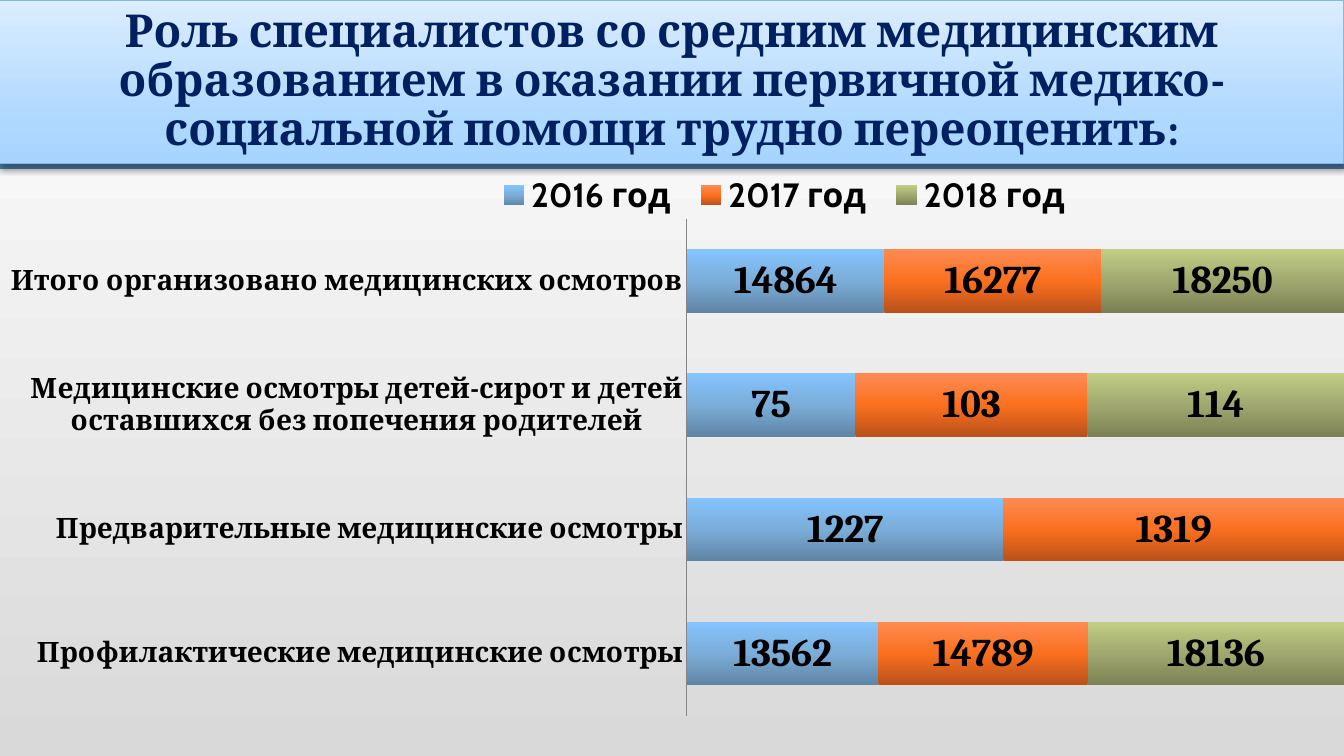
from dataclasses import dataclass

from lxml import etree
from pptx import Presentation
from pptx import util as u
from pptx.chart.data import CategoryChartData
from pptx.dml.color import RGBColor
from pptx.enum import chart as charts, shapes, text
from pptx.oxml.ns import qn

WIDTH, HEIGHT = u.Inches(13.33), u.Inches(7.5)


@dataclass(frozen=True)
class Theme:
    """Colours and type sizes; gradients list (percent, colour) from bottom to top."""
    heading_font: str = "Cambria"
    legend_font: str = "Cabin"
    title_size: float = 32.4
    category_size: int = 20
    legend_size: int = 24
    value_size: int = 28
    title_color: str = "002060"
    text_color: str = "000000"
    border: str = "84B8E2"
    axis: str = "868686"
    background: tuple = ((0, "D9D9D9"), (100, "FFFFFF"))
    band: tuple = ((0, "558BB8"), (100, "94B6D2"))
    title_fill: tuple = ((0, "A7D4FF"), (25, "AED8FF"), (100, "DBEDFF"))
    years: tuple = (
        ((0, "5F84A4"), (50, "7BADD8"), (100, "84C4FF")),
        ((0, "B9501A"), (50, "FA701F"), (100, "FF8B52")),
        ((0, "7A8052"), (50, "A0A870"), (100, "C2CE84")),
    )


THEME = Theme()

TITLE = ("Роль специалистов со средним медицинским образованием в оказании "
         "первичной медико-социальной помощи трудно переоценить:")
CATEGORIES = (
    "Профилактические медицинские осмотры",
    "Предварительные медицинские осмотры",
    "Медицинские осмотры детей-сирот и детей оставшихся без попечения родителей",
    "Итого организовано медицинских осмотров",
)
EXAMINATIONS = {
    "2016 год": (13562, 1227, 75, 14864),
    "2017 год": (14789, 1319, 103, 16277),
    "2018 год": (18136, 0, 114, 18250),
}


def fill_gradient(fill, owner, stops):
    """Fill upwards with any number of stops; owner is the XML element that holds the fill."""
    fill.gradient()
    fill.gradient_angle = 90
    stop_list = next(owner.iter(qn("a:gsLst")))
    for stop in list(stop_list):
        stop_list.remove(stop)
    for percent, color in stops:
        stop = etree.SubElement(stop_list, qn("a:gs"), pos=str(percent * 1000))
        etree.SubElement(stop, qn("a:srgbClr"), val=color)


def format_font(font, size, color=THEME.text_color, name=THEME.heading_font, bold=True):
    font.name, font.size, font.bold = name, u.Pt(size), bold
    font.color.rgb = RGBColor.from_string(color)


def write_text(shape, content, align=text.PP_ALIGN.CENTER, line_spacing=1.0, **font_format):
    frame = shape.text_frame
    frame.word_wrap = True
    frame.vertical_anchor = text.MSO_ANCHOR.MIDDLE
    paragraph = frame.paragraphs[0]
    paragraph.alignment, paragraph.line_spacing = align, line_spacing
    run = paragraph.add_run()
    run.text = content
    format_font(run.font, **font_format)


def add_top_band(slide, height, stops):
    """Add a full-width gradient rectangle at the top; height is a share of the slide."""
    band = slide.shapes.add_shape(
        shapes.MSO_SHAPE.RECTANGLE, 0, 0, WIDTH, int(HEIGHT * height))
    band.shadow.inherit = False
    fill_gradient(band.fill, band.element, stops)
    band.line.fill.background()
    return band


def add_shadow(shape, blur, distance, opacity):
    """Drop a black shadow straight down."""
    effects = next(shape.element.iter(qn("a:effectLst")))
    shadow = etree.SubElement(
        effects, qn("a:outerShdw"), blurRad=str(u.Pt(blur)), dist=str(u.Pt(distance)),
        dir="5400000", rotWithShape="0")
    color = etree.SubElement(shadow, qn("a:srgbClr"), val="000000")
    etree.SubElement(color, qn("a:alpha"), val=str(opacity * 1000))


def place_in_chart(element, index, x, y, w, h, inner=False):
    """Fix a chart part at shares of the chart's size."""
    for previous in element.findall(qn("c:layout")):
        element.remove(previous)
    layout = etree.Element(qn("c:layout"))
    element.insert(index, layout)
    manual = etree.SubElement(layout, qn("c:manualLayout"))
    settings = [("layoutTarget", "inner")] if inner else []
    settings += [("xMode", "edge"), ("yMode", "edge"), ("x", x), ("y", y), ("w", w), ("h", h)]
    for name, value in settings:
        etree.SubElement(manual, qn(f"c:{name}"), val=str(value))


def add_examinations_chart(slide, left, top, width, height):
    """Add the stacked bars; the place is given in shares of the slide."""
    data = CategoryChartData()
    data.categories = CATEGORIES
    for year, values in EXAMINATIONS.items():
        data.add_series(year, values)
    chart = slide.shapes.add_chart(
        charts.XL_CHART_TYPE.BAR_STACKED_100, int(WIDTH * left), int(HEIGHT * top),
        int(WIDTH * width), int(HEIGHT * height), data).chart
    format_font(chart.font, 18, bold=False)
    chart.has_title = False
    style_plot(chart)
    style_axes(chart)
    style_legend(chart)


def style_plot(chart):
    plot = chart.plots[0]
    plot.gap_width, plot.overlap = 95, 100
    plot.vary_by_categories = False
    place_in_chart(next(chart.element.iter(qn("c:plotArea"))), 0,
                   0.507, 0.096, 0.493, 0.853, inner=True)
    series_elements = chart.element.iter(qn("c:ser"))
    for series, element, stops in zip(plot.series, list(series_elements), THEME.years):
        fill_gradient(series.format.fill, element, stops)
        labels = series.data_labels
        labels.show_value = True
        labels.number_format, labels.number_format_is_linked = "0;;;", False  # hides zeros
        format_font(labels.font, THEME.value_size)


def style_axes(chart):
    categories, values = chart.category_axis, chart.value_axis
    categories.major_tick_mark = charts.XL_TICK_MARK.NONE
    categories.format.line.color.rgb = RGBColor.from_string(THEME.axis)
    format_font(categories.tick_labels.font, THEME.category_size)
    values.has_major_gridlines = False
    values.visible = False


def style_legend(chart):
    chart.has_legend = True
    legend = chart.legend
    legend.position = charts.XL_LEGEND_POSITION.TOP
    legend.include_in_layout = False
    format_font(legend.font, THEME.legend_size, name=THEME.legend_font)
    place_in_chart(next(chart.element.iter(qn("c:legend"))), 1, 0.355, 0.015, 0.45, 0.08)


def main():
    presentation = Presentation()
    presentation.slide_width, presentation.slide_height = WIDTH, HEIGHT
    slide = presentation.slides.add_slide(presentation.slide_layouts[6])
    fill_gradient(slide.background.fill, slide.element, THEME.background)

    add_top_band(slide, 0.223, THEME.band)
    title = add_top_band(slide, 0.216, THEME.title_fill)
    title.line.color.rgb = RGBColor.from_string(THEME.border)
    title.line.width = u.Pt(0.75)
    add_shadow(title, blur=5.2, distance=3, opacity=40)
    write_text(title, TITLE, line_spacing=0.9, size=THEME.title_size, color=THEME.title_color)

    add_examinations_chart(slide, 0.008, 0.216, 0.992, 0.77)
    presentation.save("out.pptx")


if __name__ == "__main__":
    main()
